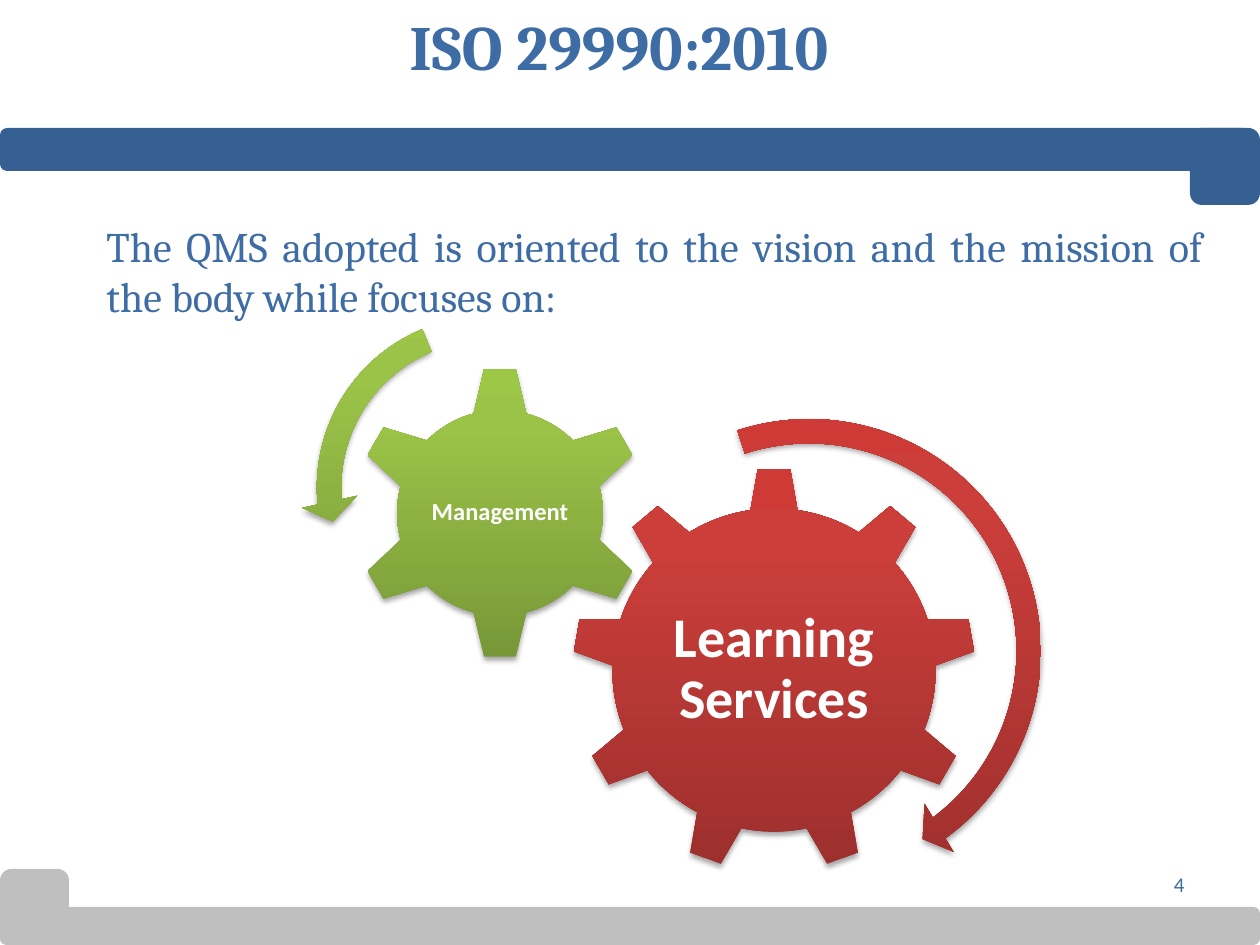
from lxml import etree
from pptx import Presentation
from pptx.dml.color import RGBColor
from pptx.enum.shapes import MSO_SHAPE as Shape
from pptx.enum.text import MSO_ANCHOR as Anchor, PP_ALIGN as Align
from pptx.oxml import parse_xml
from pptx.oxml.ns import nsdecls, qn
from pptx.util import Emu, Pt

PX = 7257.6  # 126 px to the inch
COLORS = {"bar": "376092", "footer": "BFBFBF", "text": "3E6CA4", "white": "FFFFFF"}
GRADIENTS = {
    "red": [(0, "9C2F2D"), (80, "CB3E3A"), (100, "CE3B37")],
    "green": [(0, "779737"), (80, "9BC348"), (100, "9DC746")],
}


def px(value):
    return Emu(round(value * PX))


def place(shape, box):
    shape.left, shape.top, shape.width, shape.height = map(px, box)


def write(shape, text, size, font, color, align, bold=False, anchor=Anchor.TOP):
    frame = shape.text_frame
    frame.word_wrap = True
    frame.vertical_anchor = anchor
    para = frame.paragraphs[0]
    para.alignment = align
    span = para.add_run()
    span.text = text
    span.font.size = Pt(size)
    span.font.name = font
    span.font.bold = bold
    span.font.color.rgb = RGBColor.from_string(COLORS[color])
    return frame


def add_text(page, box, *args, **options):
    return write(page.shapes.add_textbox(*map(px, box)), *args, **options)


def add_bar(page, box, color):
    bar = page.shapes.add_shape(Shape.ROUNDED_RECTANGLE, *map(px, box))
    bar.shadow.inherit = False
    bar.fill.solid()
    bar.fill.fore_color.rgb = RGBColor.from_string(COLORS[color])
    bar.line.fill.background()


def add_glossy(page, kind, box, gradient, adjustments=()):
    """Add a shape with a vertical gradient and a soft shadow."""
    shape = page.shapes.add_shape(kind, *map(px, box))
    for index, value in enumerate(adjustments):
        shape.adjustments[index] = value
    shape.line.fill.background()
    stops = "".join(
        f'<a:gs pos="{position * 1000}"><a:srgbClr val="{color}"/></a:gs>'
        for position, color in GRADIENTS[gradient])
    fill = parse_xml(
        f'<a:gradFill {nsdecls("a")} rotWithShape="1"><a:gsLst>{stops}</a:gsLst>'
        '<a:lin ang="16200000" scaled="0"/></a:gradFill>')
    properties = shape.element.spPr
    properties.find(qn("a:prstGeom")).addnext(fill)
    shape.shadow.inherit = False
    shadow = etree.SubElement(
        properties.find(qn("a:effectLst")), qn("a:outerShdw"),
        blurRad=str(Pt(3.1)), dist=str(Pt(1.8)), dir="5400000", rotWithShape="0")
    shade = etree.SubElement(shadow, qn("a:srgbClr"), val="000000")
    etree.SubElement(shade, qn("a:alpha"), val="35000")


def add_gear(page, kind, box, gradient, label, size, inset):
    add_glossy(page, kind, box, gradient)
    frame = add_text(page, box, label, size, "Calibri", "white", Align.CENTER,
                     bold=True, anchor=Anchor.MIDDLE)
    frame.margin_left = frame.margin_right = px(inset)
    frame.margin_top = frame.margin_bottom = px(inset)
    frame.paragraphs[0].line_spacing = 0.9


def main():
    deck = Presentation()
    deck.slide_width, deck.slide_height = px(1260), px(945)
    page = deck.slides.add_slide(deck.slide_layouts[5])

    # Header and footer bands
    add_bar(page, (0, 128, 1250, 43), "bar")
    add_bar(page, (1190, 128, 70, 77), "bar")
    add_bar(page, (0, 907, 1260, 38), "footer")
    add_bar(page, (0, 869, 69, 72), "footer")

    # Title and introduction
    title = page.shapes.title
    place(title, (52, 1, 1134, 127))
    write(title, "ISO 29990:2010", 36, "Cambria", "text", Align.CENTER, bold=True)
    add_text(page, (94, 214, 1121, 307),
             "The QMS adopted is oriented to the vision and the mission of "
             "the body while focuses on:", 24, "Cambria", "text", Align.JUSTIFY)

    # Gears and their turning arrows
    add_gear(page, Shape.GEAR_9, (572, 468, 404, 404), "red", "Learning Services", 32, 5)
    add_gear(page, Shape.GEAR_6, (353, 366, 294, 294), "green", "Management", 14, 3)
    add_glossy(page, Shape.CIRCULAR_ARROW, (561, 403, 496, 496), "red",
               (0.049, 3.126, 32.19, 151.205, 0.057))
    add_glossy(page, Shape.LEFT_CIRCULAR_ARROW, (301, 300, 375, 375), "green",
               (0.065, 4.3, 104.891, 148.378, 0.075))

    # Page number
    add_text(page, (903, 859, 294, 50), "4", 12, "Calibri", "text", Align.RIGHT,
             anchor=Anchor.MIDDLE)

    deck.save("out.pptx")


if __name__ == "__main__":
    main()
